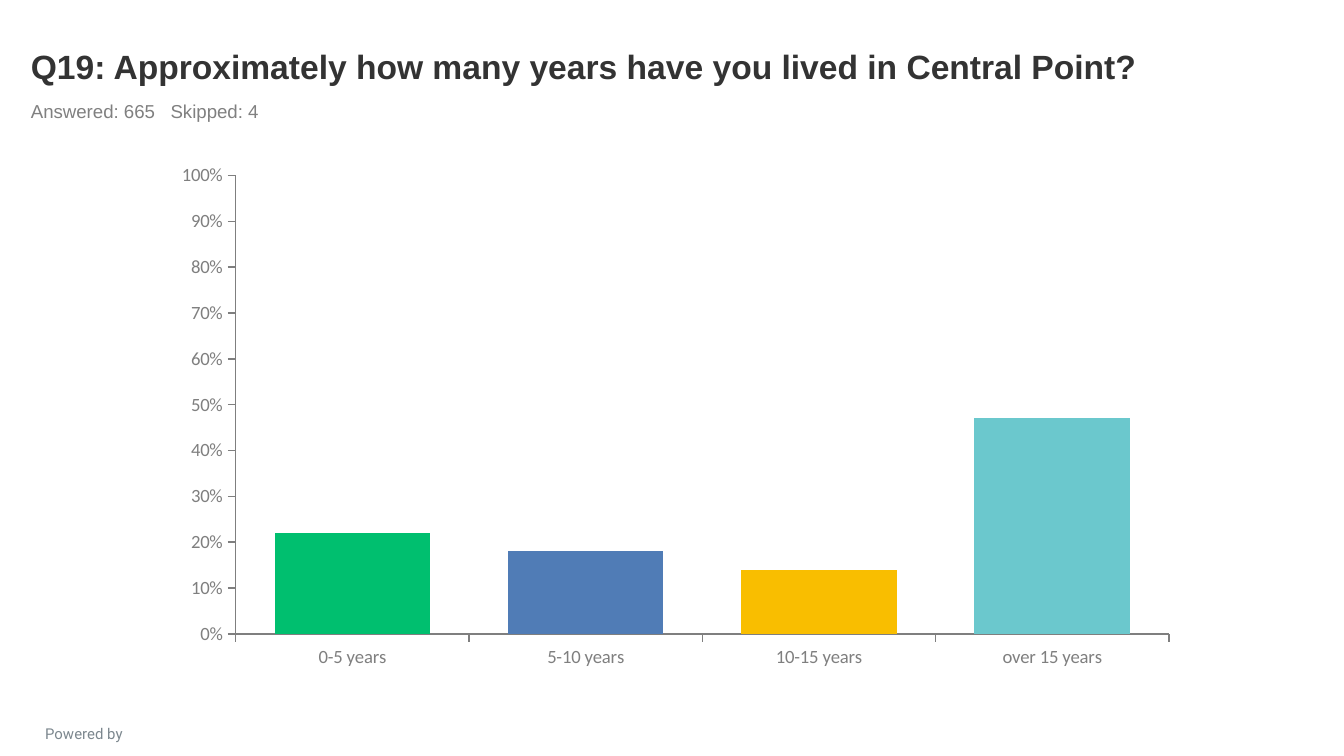
"""Build a survey result slide with a column chart of years lived in Central Point."""
import pptx
import pptx.chart.data
import pptx.dml.color
import pptx.enum.chart
import pptx.enum.text
import pptx.oxml
import pptx.oxml.ns
import pptx.util

RGBColor = pptx.dml.color.RGBColor
DARK = RGBColor(0x33, 0x33, 0x33)
GRAY = RGBColor(0x80, 0x80, 0x80)
AXIS = RGBColor(0x7F, 0x7F, 0x7F)
SLATE = RGBColor(0x7C, 0x87, 0x8E)
GREEN = RGBColor(0x00, 0xBF, 0x6F)
BLUE = RGBColor(0x50, 0x7C, 0xB6)
YELLOW = RGBColor(0xF9, 0xBE, 0x00)
TEAL = RGBColor(0x6B, 0xC8, 0xCD)

TITLE = ["Q19: Approximately how many years have you lived in Central Point?"]
COUNTS = ["Answered: 665", " ", "Skipped: 4"]
FOOTER = ["Powered by"]
ANSWERS = [
    ("0-5 years", 0.22, GREEN),
    ("5-10 years", 0.18, BLUE),
    ("10-15 years", 0.14, YELLOW),
    ("over 15 years", 0.47, TEAL),
]

WIDTH = 10
HEIGHT = WIDTH * 9 / 16
MARGIN, TEXT_WIDTH = 0.13, 9
TITLE_TOP, TITLE_HEIGHT, COUNTS_HEIGHT = 0.09, 0.6, 0.26
GAP_SPACING = "560"
CHART_BOX = (0.12 * WIDTH, 1.15, 7.65, 3.9)
FOOTER_BOX = (0.05, 0.95 * HEIGHT, 1.15, 0.18)


def inches(box):
    return [pptx.util.Inches(length) for length in box]


def place(shape, box):
    shape.left, shape.top, shape.width, shape.height = inches(box)


def write(shape, texts, size, name, color, bold=False,
          align=pptx.enum.text.PP_ALIGN.LEFT, anchor=pptx.enum.text.MSO_ANCHOR.TOP):
    frame = shape.text_frame
    frame.word_wrap = True
    frame.auto_size = pptx.enum.text.MSO_AUTO_SIZE.NONE
    frame.vertical_anchor = anchor
    paragraph = frame.paragraphs[0]
    paragraph.alignment = align
    paragraph.space_before = pptx.util.Pt(0)
    for text in texts:
        run = paragraph.add_run()
        run.text = text
        run.font.size = pptx.util.Pt(size)
        run.font.name = name
        run.font.bold = bold
        run.font.color.rgb = color
    return paragraph


def remove_bullet(paragraph):
    properties = paragraph._p.get_or_add_pPr()
    properties.set("marL", "0")
    properties.set("indent", "0")
    properties.append(pptx.oxml.parse_xml(f"<a:buNone {pptx.oxml.ns.nsdecls('a')}/>"))


def style_axis(axis):
    axis.has_major_gridlines = False
    axis.major_tick_mark = pptx.enum.chart.XL_TICK_MARK.OUTSIDE
    axis.minor_tick_mark = pptx.enum.chart.XL_TICK_MARK.NONE
    axis.format.line.color.rgb = AXIS
    axis.format.line.width = pptx.util.Pt(0.75)
    font = axis.tick_labels.font
    font.size = pptx.util.Pt(10)
    font.name = "Calibri"
    font.color.rgb = AXIS


def add_answers_chart(slide):
    data = pptx.chart.data.CategoryChartData(number_format="0%")
    data.categories = [label for label, _, _ in ANSWERS]
    data.add_series("Series 1", [share for _, share, _ in ANSWERS])
    chart = slide.shapes.add_chart(
        pptx.enum.chart.XL_CHART_TYPE.COLUMN_CLUSTERED, *inches(CHART_BOX), data).chart
    chart.has_legend = False
    chart.has_title = False
    chart.font.size = pptx.util.Pt(18)
    chart.font.name = "Calibri"
    chart.font.color.rgb = DARK

    style_axis(chart.category_axis)
    chart.category_axis.tick_label_position = pptx.enum.chart.XL_TICK_LABEL_POSITION.LOW
    style_axis(chart.value_axis)
    chart.value_axis.minimum_scale = 0
    chart.value_axis.maximum_scale = 1
    chart.value_axis.major_unit = 0.1
    chart.value_axis.tick_labels.number_format = "0%"
    chart.value_axis.tick_labels.number_format_is_linked = False

    plot = chart.plots[0]
    plot.gap_width = 50
    plot.overlap = 100
    plot.vary_by_categories = False
    series = plot.series[0]
    series.format.fill.solid()
    series.format.fill.fore_color.rgb = GREEN
    for index, (_, _, color) in enumerate(ANSWERS):
        fill = series.points[index].format.fill
        fill.solid()
        fill.fore_color.rgb = color


def main():
    presentation = pptx.Presentation()
    presentation.slide_width, presentation.slide_height = inches((WIDTH, HEIGHT))
    slide = presentation.slides.add_slide(presentation.slide_layouts[1])

    footer = slide.shapes.add_textbox(*inches(FOOTER_BOX))
    write(footer, FOOTER, 8, "Roboto", SLATE, align=pptx.enum.text.PP_ALIGN.CENTER)

    title = slide.shapes.title
    place(title, (MARGIN, TITLE_TOP, TEXT_WIDTH, TITLE_HEIGHT))
    write(title, TITLE, 18, "Arial", DARK, bold=True,
          anchor=pptx.enum.text.MSO_ANCHOR.BOTTOM)

    counts = slide.placeholders[1]
    place(counts, (MARGIN, TITLE_TOP + TITLE_HEIGHT, TEXT_WIDTH, COUNTS_HEIGHT))
    paragraph = write(counts, COUNTS, 10, "Arial", GRAY)
    remove_bullet(paragraph)
    gap = paragraph.runs[1]
    gap._r.get_or_add_rPr().set("spc", GAP_SPACING)

    add_answers_chart(slide)
    presentation.save("out.pptx")


if __name__ == "__main__":
    main()
